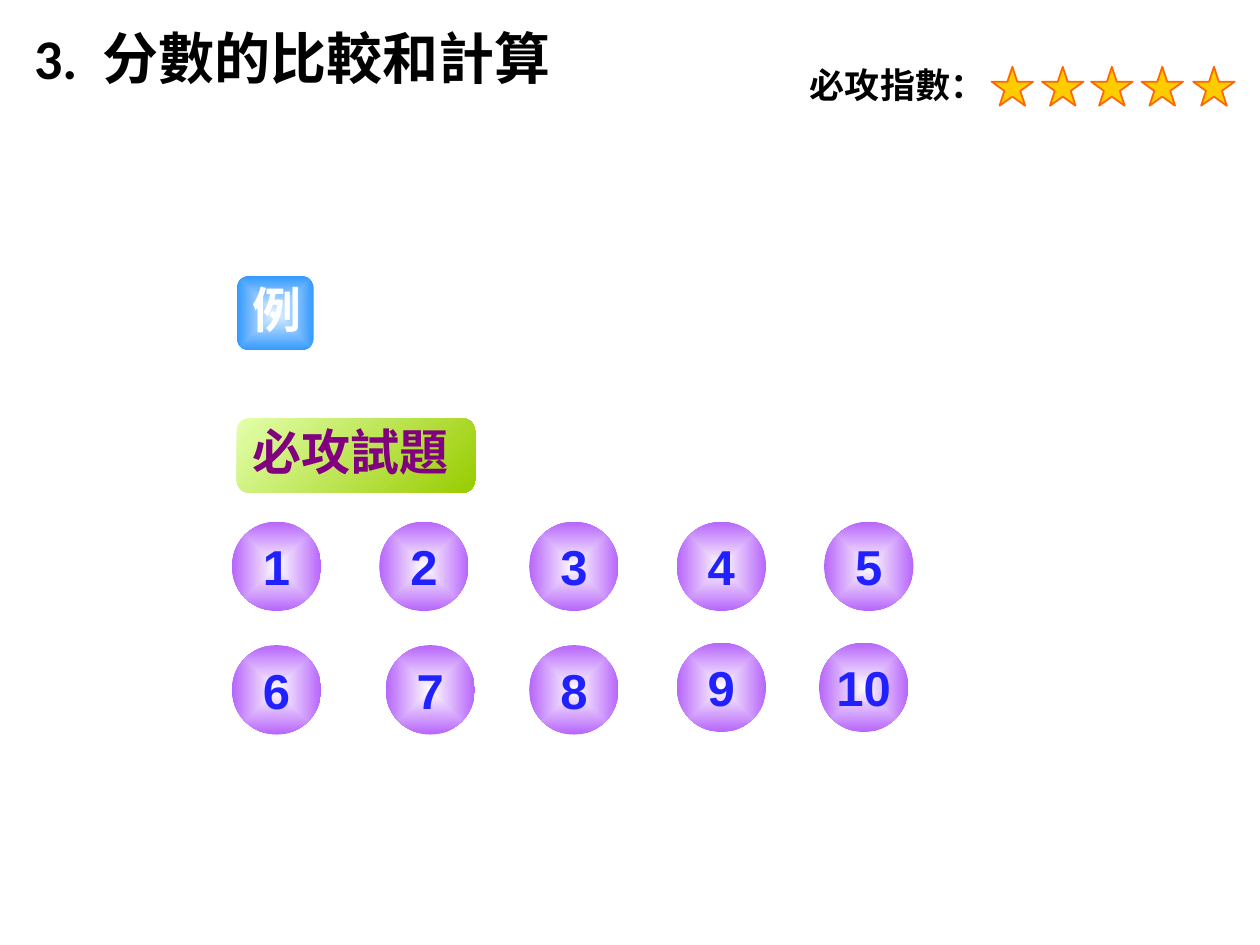
import pptx
import pptx.dml.color
import pptx.enum.shapes
import pptx.enum.text
import pptx.oxml
import pptx.oxml.ns
import pptx.util

Inches = pptx.util.Inches
Pt = pptx.util.Pt
Shape = pptx.enum.shapes.MSO_SHAPE
Align = pptx.enum.text.PP_ALIGN
Anchor = pptx.enum.text.MSO_ANCHOR

COLOURS = {
    "black": "000000", "white": "FFFFFF", "star": "FFCC00", "star_edge": "FF6600",
    "violet": "B765FB", "number": "2121FF", "pale_green": "E3FFAB", "green": "99CC00",
    "purple": "800080", "pale_blue": "E5F2FF", "blue": "3399FF",
}
CJK = "Noto Sans CJK SC"
TITLE = "3.\t分數的比較和計算"
RATING = "必攻指數："
STAR_LEFTS = [7.87, 8.27, 8.66, 9.06, 9.47]
BADGES = [
    ("例", (1.88, 2.19, 0.61, 0.59), "pale_blue", "blue", "white", Align.CENTER, None),
    ("必攻試題", (1.88, 3.32, 1.89, 0.59), "pale_green", "green", "purple", Align.LEFT, 315),
]
BUTTON_SIZE = 0.71
BUTTON_ROWS = [
    [(1.84, 4.14), (3.01, 4.14), (4.2, 4.14), (5.37, 4.14), (6.54, 4.14)],
    [(1.84, 5.12), (3.06, 5.12), (4.2, 5.12), (5.37, 5.1), (6.5, 5.1)],
]


def rgb(name):
    """Return the named colour."""
    return pptx.dml.color.RGBColor.from_string(COLOURS[name])


def write(box, text, size, font, colour, align=Align.LEFT, anchor=Anchor.TOP,
          spacing=None, wrap=True, tab=None):
    """Fill a shape with one bold run."""
    frame = box.text_frame
    frame.word_wrap = wrap
    frame.auto_size = pptx.enum.text.MSO_AUTO_SIZE.NONE
    frame.vertical_anchor = anchor
    para = frame.paragraphs[0]
    para.alignment = align
    if spacing:
        para.line_spacing = Pt(spacing)
    if tab:
        stops = pptx.oxml.parse_xml(
            f'<a:tabLst {pptx.oxml.ns.nsdecls("a")}><a:tab pos="{Inches(tab)}" algn="l"/></a:tabLst>')
        para._p.get_or_add_pPr().append(stops)
    span = para.add_run()
    span.text = text
    span.font.size = Pt(size)
    span.font.bold = True
    span.font.name = font
    span.font.color.rgb = rgb(colour)
    east_asian = pptx.oxml.parse_xml(f'<a:ea {pptx.oxml.ns.nsdecls("a")} typeface="{CJK}"/>')
    span.font._element.find(pptx.oxml.ns.qn("a:latin")).addnext(east_asian)


def add_shape(page, kind, place):
    """Add a preset shape without shadow."""
    shape = page.shapes.add_shape(kind, *map(Inches, place))
    shape.shadow.inherit = False
    return shape


def shade(shape, inner, outer, angle=None):
    """Apply a linear gradient, or one from the centre when no angle is given."""
    shape.line.fill.background()
    shape.fill.gradient()
    for stop, colour in zip(shape.fill.gradient_stops, (inner, outer)):
        stop.color.rgb = rgb(colour)
    if angle is not None:
        shape.fill.gradient_angle = angle
        return
    linear = shape._element.spPr.find(".//" + pptx.oxml.ns.qn("a:lin"))
    centre = pptx.oxml.parse_xml(
        f'<a:path {pptx.oxml.ns.nsdecls("a")} path="shape">'
        '<a:fillToRect l="50000" t="50000" r="50000" b="50000"/></a:path>')
    linear.getparent().replace(linear, centre)


def main():
    """Build the exercise index slide."""
    deck = pptx.Presentation()
    deck.slide_width, deck.slide_height = Inches(10), Inches(7.5)
    page = deck.slides.add_slide(deck.slide_layouts[5])

    title = page.shapes.title
    title.left, title.top, title.width, title.height = map(Inches, (0.17, 0.14, 6.56, 0.82))
    write(title, TITLE, 32, "Calibri", "black", tab=0.54)

    rating = page.shapes.add_textbox(*map(Inches, (6.33, 0.49, 1.99, 0.47)))
    write(rating, RATING, 20, "Arial", "black", spacing=21.6)
    for left in STAR_LEFTS:
        star = add_shape(page, Shape.STAR_5_POINT, (left, 0.53, 0.33, 0.31))
        star.fill.solid()
        star.fill.fore_color.rgb = rgb("star")
        star.line.color.rgb = rgb("star_edge")
        star.line.width = Pt(1)

    for text, place, inner, outer, colour, align, angle in BADGES:
        badge = add_shape(page, Shape.ROUNDED_RECTANGLE, place)
        shade(badge, inner, outer, angle)
        write(badge, text, 28, CJK, colour, align, spacing=30)

    places = [place for row in BUTTON_ROWS for place in row]
    for number, (left, top) in enumerate(places, 1):
        button = add_shape(page, Shape.OVAL, (left, top, BUTTON_SIZE, BUTTON_SIZE))
        shade(button, "white", "violet")
        write(button, str(number), 28, "Arial", "number", Align.CENTER, Anchor.MIDDLE, wrap=False)

    deck.save("out.pptx")


if __name__ == "__main__":
    main()
